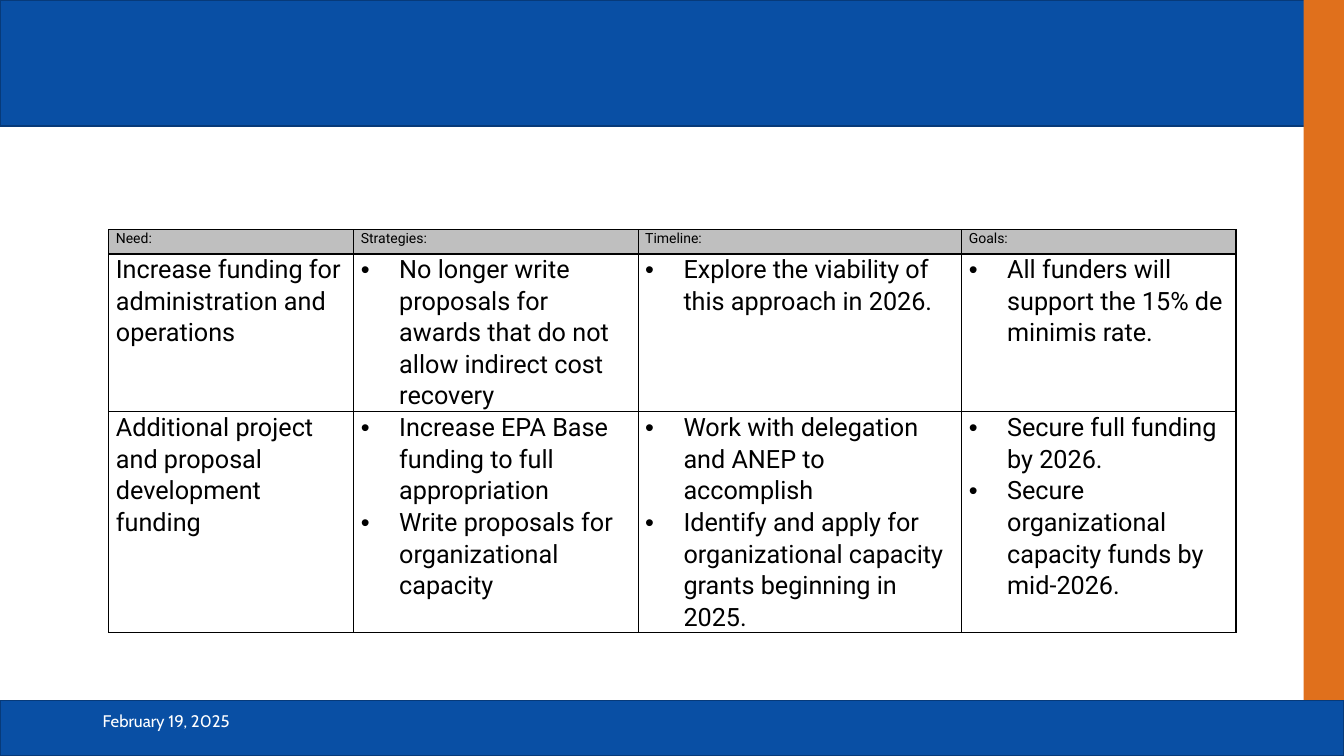
from lxml.etree import SubElement, fromstring
from pptx import Presentation
from pptx.dml.color import RGBColor
from pptx.enum.shapes import MSO_SHAPE as SHAPE
from pptx.enum.text import MSO_ANCHOR as ANCHOR
from pptx.oxml.ns import nsdecls, qn
from pptx.util import Inches, Pt

BLUE = RGBColor(0x09, 0x4F, 0xA4)
NAVY = RGBColor(0x07, 0x3A, 0x79)
ORANGE = RGBColor(0xE0, 0x70, 0x1C)
GRAY = RGBColor(0xBF, 0xBF, 0xBF)
BLACK = RGBColor(0, 0, 0)
WHITE = RGBColor(0xFF, 0xFF, 0xFF)

# Content
DATE = "February 19, 2025"
HEADERS = ["Need:", "Strategies:", "Timeline:", "Goals:"]
PLAN = [
    [["Increase funding for administration and operations"],
     ["No longer write proposals for awards that do not allow indirect cost recovery"],
     ["Explore the viability of this approach in 2026."],
     ["All funders will support the 15% de minimis rate."]],
    [["Additional project and proposal development funding"],
     ["Increase EPA Base funding to full appropriation",
      "Write proposals for organizational capacity"],
     ["Work with delegation and ANEP to accomplish",
      "Identify and apply for organizational capacity grants beginning in 2025."],
     ["Secure full funding by 2026.",
      "Secure organizational capacity funds by mid-2026."]],
]
# left, top, width, height, fill, line
BANDS = [
    (0, 0, 13.33, 1.25, BLUE, NAVY),
    (12.93, -0.01, 0.42, 7.37, ORANGE, None),
    (0, 6.95, 13.33, 0.55, BLUE, NAVY),
]
TABLE_LEFT = 1.08
COL_WIDTHS = [2.43, 2.82, 3.21, 2.72]
HEADER_TOP, HEADER_HEIGHTS = 2.28, [0.24]
PLAN_TOP, PLAN_HEIGHTS = 2.51, [1.34, 2.01]
BULLET_INDENT = 0.38


def write(tf, lines, font="Roboto", size=18, color=BLACK, spacing=None,
          bullets=False, after=None):
    """Fill a text frame; `after` is the space below the last paragraph."""
    for i, line in enumerate(lines):
        p = tf.add_paragraph() if i else tf.paragraphs[0]
        if spacing:
            p.line_spacing = spacing
        if after and i == len(lines) - 1:
            p.space_after = Pt(after)
        if bullets:
            pPr = p._p.get_or_add_pPr()
            pPr.set("marL", str(Inches(BULLET_INDENT)))
            pPr.set("indent", str(-Inches(BULLET_INDENT)))
            SubElement(pPr, qn("a:buFont")).set("typeface", "Arial")
            SubElement(pPr, qn("a:buChar")).set("char", "•")
        r = p.add_run()
        r.text = line
        r.font.name, r.font.size = font, Pt(size)
        r.font.color.rgb = color


def add_borders(cell):
    tcPr = cell._tc.get_or_add_tcPr()
    for i, side in enumerate("LRTB"):
        tcPr.insert(i, fromstring(
            f'<a:ln{side} {nsdecls("a")} w="{Pt(1)}"><a:solidFill>'
            f'<a:srgbClr val="{BLACK}"/></a:solidFill></a:ln{side}>'))


def add_grid(s, top, heights, rows, size, fill=None, bulleted=False):
    frame = s.shapes.add_table(len(rows), len(COL_WIDTHS), Inches(TABLE_LEFT), Inches(top),
                               Inches(sum(COL_WIDTHS)), Inches(sum(heights)))
    table = frame.table
    table.first_row = table.horz_banding = False
    for column, width in zip(table.columns, COL_WIDTHS):
        column.width = Inches(width)
    for row, height, texts in zip(table.rows, heights, rows):
        row.height = Inches(height)
        for c, (cell, lines) in enumerate(zip(row.cells, texts)):
            cell.margin_left = cell.margin_right = Inches(0.07)
            cell.margin_top = cell.margin_bottom = 0
            if fill is None:
                cell.fill.background()
            else:
                cell.fill.solid()
                cell.fill.fore_color.rgb = fill
            add_borders(cell)
            is_last = c == len(COL_WIDTHS) - 1
            write(cell.text_frame, lines, size=size, spacing=1.07,
                  bullets=bulleted and c > 0, after=8 if is_last else None)


prs = Presentation()
prs.slide_width, prs.slide_height = Inches(13.33), Inches(7.5)
s = prs.slides.add_slide(prs.slide_layouts[6])

# Colour bands
for *box, fill, line in BANDS:
    sp = s.shapes.add_shape(SHAPE.RECTANGLE, *map(Inches, box))
    sp.shadow.inherit = False
    sp.fill.solid()
    sp.fill.fore_color.rgb = fill
    if line is None:
        sp.line.fill.background()
    else:
        sp.line.color.rgb = line
        sp.line.width = Pt(1)

# Plan table
add_grid(s, PLAN_TOP, PLAN_HEIGHTS, PLAN, 18, bulleted=True)

# Date
tf = s.shapes.add_textbox(Inches(0.92), Inches(6.95), Inches(3), Inches(0.4)).text_frame
tf.word_wrap = True
tf.vertical_anchor = ANCHOR.MIDDLE
write(tf, [DATE], font="Cabin", size=12, color=WHITE)

# Header table
add_grid(s, HEADER_TOP, HEADER_HEIGHTS, [[[h] for h in HEADERS]], 10, fill=GRAY)

prs.save("out.pptx")
